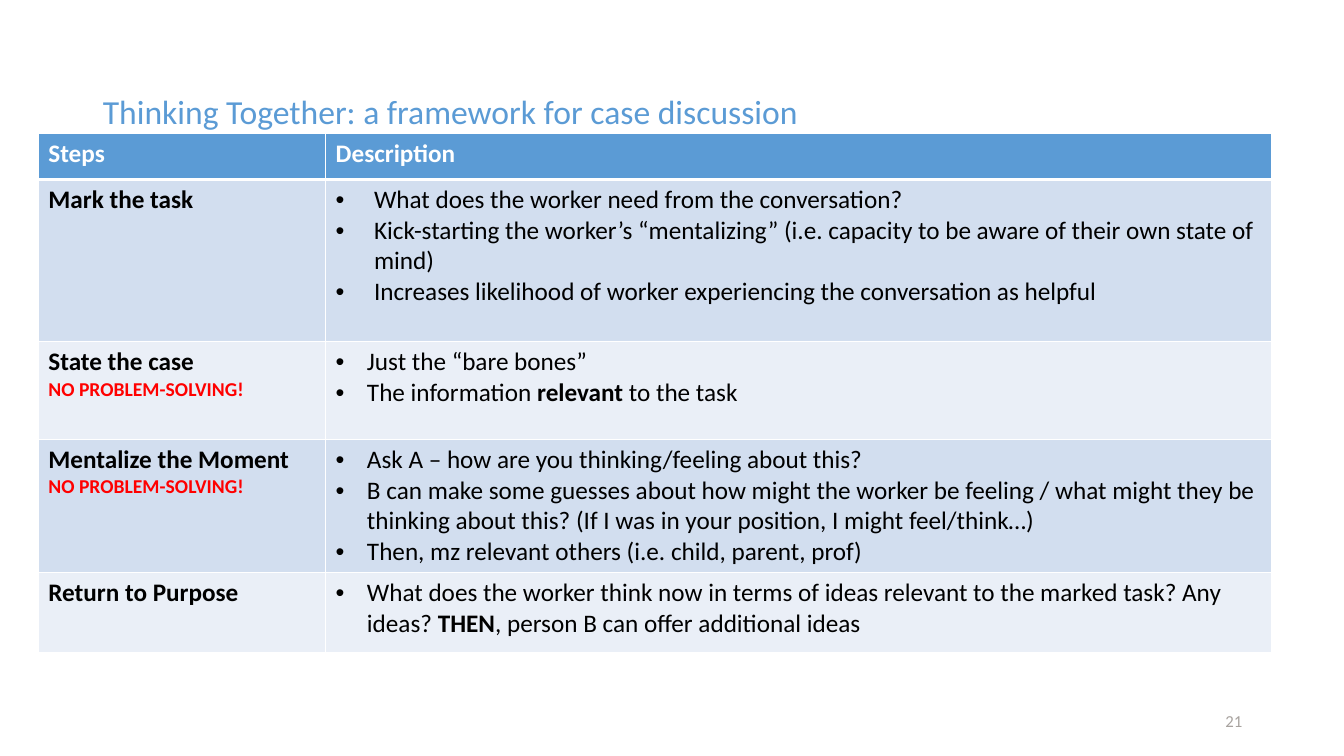
from lxml import etree
from pptx import Presentation
from pptx import util as u
from pptx.dml.color import RGBColor
from pptx.enum import text
from pptx.oxml import ns

COLORS = {
    "accent": "5B9BD5",
    "band_dark": "D2DEEF",
    "band_light": "EAEFF7",
    "white": "FFFFFF",
    "black": "000000",
    "warning": "FF0000",
    "number": "A8A39F",
}
COLUMN_WIDTHS = [2.85, 9.38]
HEADER_HEIGHT = 0.46
WARNING = "NO PROBLEM-SOLVING!"
STEPS = [
    ("Mark the task", None, 1.61, 0.38, [
        "What does the worker need from the conversation?",
        "Kick-starting the worker’s “mentalizing” (i.e. capacity to be aware of their own state of mind)",
        "Increases likelihood of worker experiencing the conversation as helpful",
    ]),
    ("State the case", WARNING, 0.97, 0.31, [
        "Just the “bare bones”",
        "The information **relevant** to the task",
    ]),
    ("Mentalize the Moment", WARNING, 1.12, 0.31, [
        "Ask A – how are you thinking/feeling about this?",
        "B can make some guesses about how might the worker be feeling / what might they be "
        "thinking about this? (If I was in your position, I might feel/think…)",
        "Then, mz relevant others (i.e. child, parent, prof)",
    ]),
    ("Return to Purpose", None, 0.79, 0.31, [
        "What does the worker think now in terms of ideas relevant to the marked task? "
        "Any ideas? **THEN**, person B can offer additional ideas",
    ]),
]


class FrameworkSlide:
    font = "Calibri"

    def __init__(self, deck):
        self.slide = deck.slides.add_slide(deck.slide_layouts[5])

    def apply(self, target, values):
        for name, value in values.items():
            setattr(target, name, value)

    def add_words(self, paragraph, words, size, color, bold=False):
        run = paragraph.add_run()
        run.text = words
        self.apply(run.font, {"name": self.font, "size": u.Pt(size), "bold": bold})
        run.font.color.rgb = RGBColor.from_string(COLORS[color])

    def place(self, shape, left, top, width, height):
        self.apply(shape, {"left": u.Inches(left), "top": u.Inches(top),
                           "width": u.Inches(width), "height": u.Inches(height)})
        self.apply(shape.text_frame, {"word_wrap": True,
                                      "auto_size": text.MSO_AUTO_SIZE.NONE,
                                      "vertical_anchor": text.MSO_ANCHOR.MIDDLE})

    def title(self, words):
        heading = self.slide.shapes.title
        self.place(heading, 0.92, 0.4, 11.5, 1.45)
        line = heading.text_frame.paragraphs[0]
        self.apply(line, {"alignment": text.PP_ALIGN.LEFT, "line_spacing": 0.9})
        self.add_words(line, words, 24, "accent")

    def page_number(self, number):
        footer = self.slide.shapes.add_textbox(0, 0, 0, 0)
        self.place(footer, 9.42, 6.95, 3, 0.4)
        line = footer.text_frame.paragraphs[0]
        line.alignment = text.PP_ALIGN.RIGHT
        self.add_words(line, number, 12, "number")

    def table(self, left, top, heights):
        frame = self.slide.shapes.add_table(
            len(heights), len(COLUMN_WIDTHS), u.Inches(left), u.Inches(top),
            u.Inches(sum(COLUMN_WIDTHS)), u.Inches(sum(heights)))
        grid = frame.table
        for column, width in zip(grid.columns, COLUMN_WIDTHS):
            column.width = u.Inches(width)
        for row, height in zip(grid.rows, heights):
            row.height = u.Inches(height)
        return grid

    def cell(self, cell, fill, top=1, bottom=1):
        cell.fill.solid()
        cell.fill.fore_color.rgb = RGBColor.from_string(COLORS[fill])
        properties = cell._tc.get_or_add_tcPr()
        edges = {"lnL": 1, "lnR": 1, "lnT": top, "lnB": bottom}
        for position, (edge, weight) in enumerate(edges.items()):
            border = etree.Element(ns.qn(f"a:{edge}"), w=str(u.Pt(weight)))
            solid = etree.SubElement(border, ns.qn("a:solidFill"))
            etree.SubElement(solid, ns.qn("a:srgbClr"), val=COLORS["white"])
            properties.insert(position, border)
        return cell.text_frame

    def bullets(self, frame, points, indent):
        for index, point in enumerate(points):
            line = frame.add_paragraph() if index else frame.paragraphs[0]
            properties = line._p.get_or_add_pPr()
            properties.set("marL", str(u.Inches(indent)))
            properties.set("indent", str(-u.Inches(indent)))
            etree.SubElement(properties, ns.qn("a:buFont"), typeface="Arial")
            etree.SubElement(properties, ns.qn("a:buChar"), char="•")
            for part, words in enumerate(point.split("**")):
                self.add_words(line, words, 18, "black", part % 2 == 1)

    def framework(self):
        grid = self.table(0.38, 1.32, [HEADER_HEIGHT] + [step[2] for step in STEPS])
        for column, heading in enumerate(["Steps", "Description"]):
            frame = self.cell(grid.cell(0, column), "accent", bottom=3)
            self.add_words(frame.paragraphs[0], heading, 18, "white", True)
        for row, (name, warning, _, indent, points) in enumerate(STEPS, 1):
            band = "band_dark" if row % 2 else "band_light"
            step, description = [
                self.cell(grid.cell(row, column), band, top=3 if row == 1 else 1)
                for column in range(2)]
            self.add_words(step.paragraphs[0], name, 18, "black", True)
            if warning:
                self.add_words(step.add_paragraph(), warning, 14, "warning", True)
            self.bullets(description, points, indent)


def main():
    deck = Presentation()
    deck.slide_width, deck.slide_height = u.Inches(13.33), u.Inches(7.5)
    page = FrameworkSlide(deck)
    page.title("Thinking Together: a framework for case discussion")
    page.page_number("21")
    page.framework()
    deck.save("out.pptx")


if __name__ == "__main__":
    main()
